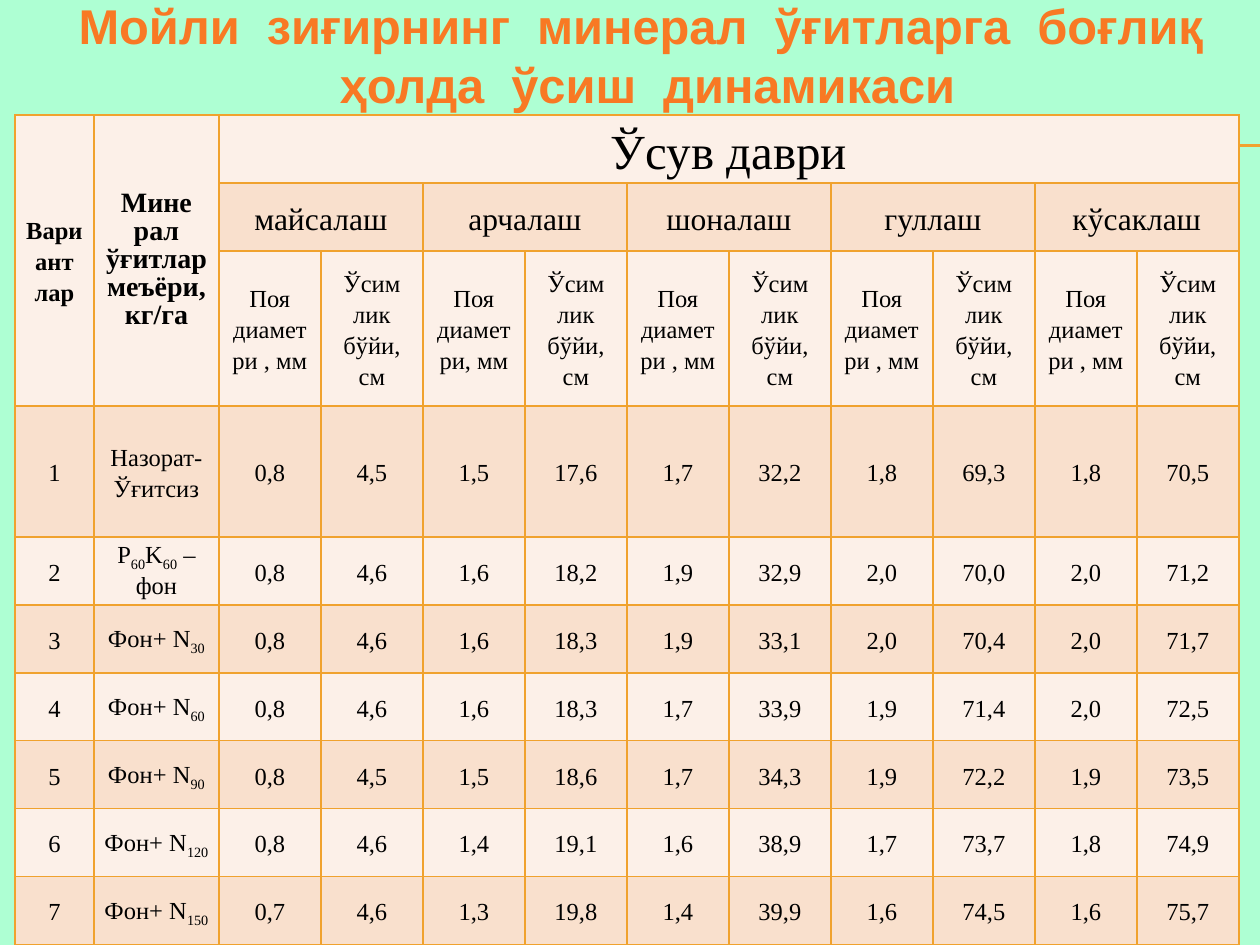
from dataclasses import dataclass

from lxml import etree
from pptx import Presentation
from pptx.dml.color import RGBColor
from pptx.enum.shapes import MSO_CONNECTOR
from pptx.enum.text import MSO_ANCHOR, PP_ALIGN
from pptx.oxml.ns import qn
from pptx.util import Pt

CENTER = PP_ALIGN.CENTER
MIDDLE = MSO_ANCHOR.MIDDLE
STRAIGHT = MSO_CONNECTOR.STRAIGHT
SCALE = 914400 / 126


@dataclass(frozen=True)
class Theme:
    back: str = "AEFFD3"
    title: str = "F87924"
    line: str = "F0A22E"
    ink: str = "000000"
    bands: tuple[str, str] = ("FCF0E8", "F9E0CD")
    head: str = "Arial"
    body: str = "Times New Roman"
    big: float = 27.9
    season: int = 28
    phase: int = 18
    dose: int = 16
    base: int = 14
    loose: float = 1.15
    plain: float = 1.0
    tight: float = 0.9


THEME = Theme()


@dataclass(frozen=True)
class Head:
    """A header cell that spans rows and columns."""
    row: int
    col: int
    text: str
    size: int
    rows: int = 1
    cols: int = 1
    bold: bool = False
    space: float = THEME.loose


TITLE = "Мойли  зиғирнинг  минерал  ўғитларга  боғлиқ  ҳолда  ўсиш  динамикаси"
PHASES = ["майсалаш", "арчалаш", "шоналаш", "гуллаш", "кўсаклаш"]
WIDTHS = [79, 125] + [102] * 10
HEIGHTS = [68, 68, 155, 131] + [68] * 6
RULES = [145, 146]

# Text between underscores is set as subscript.
DATA = [
    ("Назорат-Ўғитсиз", "0,8 4,5 1,5 17,6 1,7 32,2 1,8 69,3 1,8 70,5"),
    ("P_60_K_60_ – фон", "0,8 4,6 1,6 18,2 1,9 32,9 2,0 70,0 2,0 71,2"),
    ("Фон+ N_30_", "0,8 4,6 1,6 18,3 1,9 33,1 2,0 70,4 2,0 71,7"),
    ("Фон+ N_60_", "0,8 4,6 1,6 18,3 1,7 33,9 1,9 71,4 2,0 72,5"),
    ("Фон+ N_90_", "0,8 4,5 1,5 18,6 1,7 34,3 1,9 72,2 1,9 73,5"),
    ("Фон+ N_120_", "0,8 4,6 1,4 19,1 1,6 38,9 1,7 73,7 1,8 74,9"),
    ("Фон+ N_150_", "0,7 4,6 1,3 19,8 1,4 39,9 1,6 74,5 1,6 75,7"),
]


def px(count: int) -> int:
    return round(count * SCALE)


def rgb(code: str) -> RGBColor:
    return RGBColor.from_string(code)


def put(frame, text: str, *, size: float = THEME.base, font: str = THEME.body,
        color: str = THEME.ink, bold: bool = False,
        space: float = THEME.loose) -> None:
    """Write one centred paragraph per line of text."""
    frame.word_wrap = True
    for i, line in enumerate(text.split("\n")):
        para = frame.paragraphs[0] if i == 0 else frame.add_paragraph()
        para.alignment = CENTER
        para.line_spacing = space
        for j, part in enumerate(line.split("_")):
            if not part:
                continue
            run = para.add_run()
            run.text = part
            run.font.size = Pt(size)
            run.font.name = font
            run.font.bold = bold
            run.font.color.rgb = rgb(color)
            if j % 2:
                run._r.get_or_add_rPr().set("baseline", "-25000")


def edge(cell) -> None:
    """Draw all four borders of a cell."""
    props = cell._tc.get_or_add_tcPr()
    for side in ("lnL", "lnR", "lnT", "lnB"):
        line = etree.SubElement(props, qn(f"a:{side}"), w=str(Pt(1)))
        fill = etree.SubElement(line, qn("a:solidFill"))
        etree.SubElement(fill, qn("a:srgbClr"), val=THEME.line)


def rule(slide, y: int) -> None:
    line = slide.shapes.add_connector(STRAIGHT, px(71), px(y), px(1260), px(y))
    line.line.color.rgb = rgb(THEME.line)
    line.line.width = Pt(0.75)
    etree.SubElement(line._element.spPr, qn("a:effectLst"))


def heads() -> list[Head]:
    cells = [
        Head(0, 0, "Вариант\nлар", THEME.base, rows=3, bold=True),
        Head(0, 1, "Мине\nрал ўғитлар меъёри, кг/га", THEME.dose,
             rows=3, bold=True, space=THEME.tight),
        Head(0, 2, "Ўсув даври", THEME.season, cols=10),
    ]
    for i, phase in enumerate(PHASES):
        col = 2 + 2 * i
        unit = "ри, мм" if phase == "арчалаш" else "ри , мм"
        cells += [
            Head(1, col, phase, THEME.phase, cols=2),
            Head(2, col, f"Поя\nдиамет\n{unit}", THEME.base),
            Head(2, col + 1, "Ўсим\nлик бўйи, см", THEME.base),
        ]
    return cells


def grid(slide) -> None:
    """Build the growth table."""
    frame = slide.shapes.add_table(len(HEIGHTS), len(WIDTHS), px(15), px(115),
                                   px(sum(WIDTHS)), px(sum(HEIGHTS)))
    table = frame.table
    table.first_row = table.horz_banding = False
    for col, width in zip(table.columns, WIDTHS):
        col.width = px(width)
    for r, (row, height) in enumerate(zip(table.rows, HEIGHTS)):
        row.height = px(height)
        for cell in row.cells:
            edge(cell)
            cell.fill.solid()
            cell.fill.fore_color.rgb = rgb(THEME.bands[r % 2])
            cell.vertical_anchor = MIDDLE
            cell.margin_left = cell.margin_right = px(9)
            cell.margin_top = cell.margin_bottom = 0
    for head in heads():
        cell = table.cell(head.row, head.col)
        if head.rows * head.cols > 1:
            cell.merge(table.cell(head.row + head.rows - 1,
                                  head.col + head.cols - 1))
        put(cell.text_frame, head.text, size=head.size, bold=head.bold,
            space=head.space)
    for n, (name, values) in enumerate(DATA, 1):
        for c, text in enumerate([str(n), name, *values.split()]):
            # Two lines with subscripts need less leading to fit the row.
            space = THEME.plain if text.count("_") > 2 else THEME.loose
            put(table.cell(n + 2, c).text_frame, text, space=space)


def main() -> None:
    deck = Presentation()
    deck.slide_width, deck.slide_height = px(1260), px(945)
    slide = deck.slides.add_slide(deck.slide_layouts[6])
    slide.background.fill.solid()
    slide.background.fill.fore_color.rgb = rgb(THEME.back)
    for y in RULES:
        rule(slide, y)
    box = slide.shapes.add_textbox(px(35), 0, px(1225), px(108))
    frame = box.text_frame
    frame.vertical_anchor = MIDDLE
    frame.margin_top = frame.margin_bottom = 0
    put(frame, TITLE, size=THEME.big, font=THEME.head, color=THEME.title,
        bold=True, space=Pt(34))
    grid(slide)
    deck.save("out.pptx")


if __name__ == "__main__":
    main()
